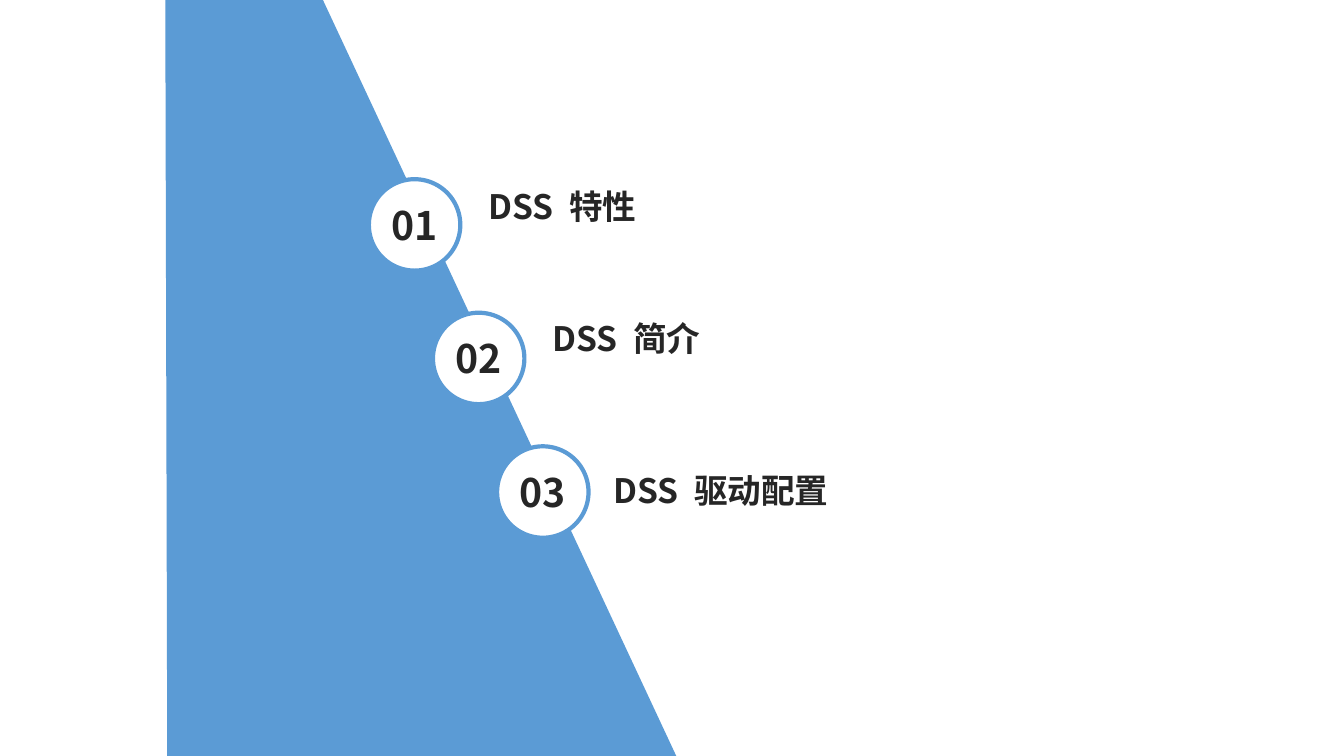
from lxml import etree
from pptx import Presentation
from pptx import util as u
from pptx.dml.color import RGBColor
from pptx.enum import shapes, text
from pptx.oxml import ns

Pt = u.Pt
COLORS = {"blue": "5B9BD5", "white": "FFFFFF", "ink": "262626"}
FONT = "Noto Sans CJK SC"


def color(name):
    return RGBColor.from_string(COLORS[name])


def add_label(parent, box, words, size, align, gap=0):
    """Add a bold one-line text box; gap widens the spaces between words."""
    shape = parent.add_textbox(*map(Pt, box))
    frame = shape.text_frame
    frame.word_wrap = True
    frame.auto_size = text.MSO_AUTO_SIZE.SHAPE_TO_FIT_TEXT
    paragraph = frame.paragraphs[0]
    paragraph.alignment = align
    for index, word in enumerate(words):
        run = paragraph.add_run()
        run.text = word
        for key, value in {"name": FONT, "size": Pt(size), "bold": True}.items():
            setattr(run.font, key, value)
        run.font.color.rgb = color("ink")
        properties = run.font._element
        etree.SubElement(properties, ns.qn("a:ea"), typeface=FONT)
        if word == " ":
            properties.set("spc", str(gap))


presentation = Presentation()
presentation.slide_width, presentation.slide_height = Pt(960), Pt(540)
slide = presentation.slides.add_slide(presentation.slide_layouts[6])

# Slanted blue panel
corners = [(483.1, 540), (230.4, -0.7), (118.1, -0.7), (119.5, 542.9)]
points = [(Pt(x), Pt(y)) for x, y in corners]
builder = slide.shapes.build_freeform(*points[0])
builder.add_line_segments(points[1:], close=True)
panel = builder.convert_to_shape()
panel.shadow.inherit = False
panel.fill.solid()
panel.fill.fore_color.rgb = color("blue")
panel.line.fill.background()

# Numbered badges stepping down the slanted edge
for index in range(3):
    left, top = 263.5 + 45.8 * index, 128 + 95.4 * index
    badge = slide.shapes.add_group_shape()
    circle = badge.shapes.add_shape(
        shapes.MSO_SHAPE.OVAL, Pt(left), Pt(top), Pt(65.3), Pt(65.3))
    circle.shadow.inherit = False
    circle.fill.solid()
    circle.fill.fore_color.rgb = color("white")
    circle.line.color.rgb = color("blue")
    circle.line.width = Pt(3)
    add_label(badge.shapes, (left + 6, top + 12, 53.3, 43.2),
              [f"{index + 1:02}"], 28, text.PP_ALIGN.CENTER)

# Section titles
titles = [
    ("特性", 342, 128.9, 440),
    ("简介", 387.6, 223.5, 394),
    ("驱动配置", 431.2, 332, 394),
]
for topic, left, top, width in titles:
    add_label(slide.shapes, (left, top, width, 36.3),
              ["DSS", " ", topic], 24, text.PP_ALIGN.LEFT, gap=540)

presentation.save("out.pptx")
